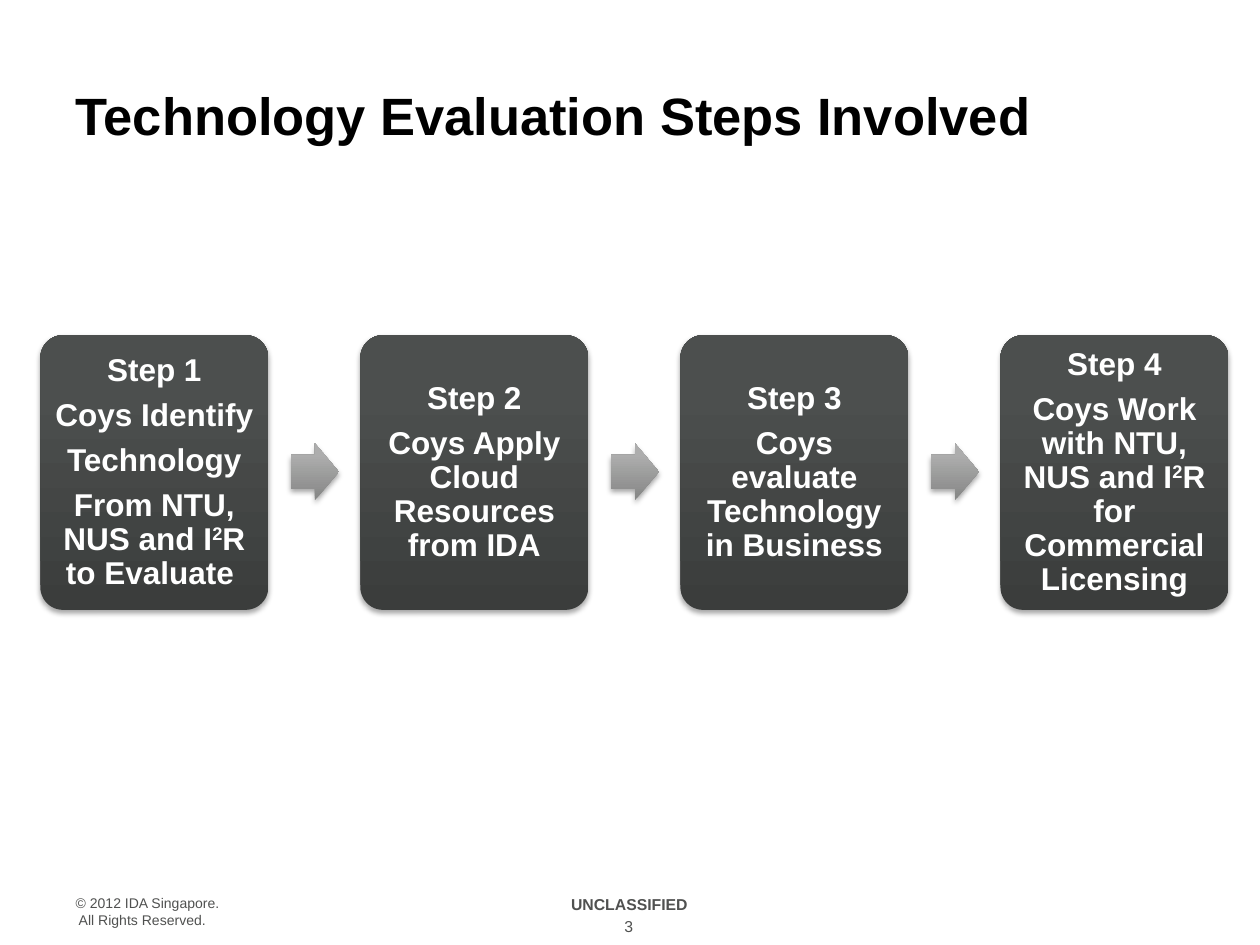
import copy
from dataclasses import dataclass

import lxml.etree
import pptx
import pptx.dml.color
import pptx.enum.shapes
import pptx.enum.text
import pptx.oxml.ns
import pptx.util

RGB = pptx.dml.color.RGBColor
SHAPE = pptx.enum.shapes.MSO_SHAPE
ALIGN = pptx.enum.text.PP_ALIGN
ANCHOR = pptx.enum.text.MSO_ANCHOR

BLACK = RGB(0x00, 0x00, 0x00)
WHITE = RGB(0xFF, 0xFF, 0xFF)
FOOTER_GREY = RGB(0x50, 0x51, 0x50)
CARD_GRADIENT = (RGB(0x3B, 0x3D, 0x3C), RGB(0x4C, 0x4F, 0x4E), RGB(0x4D, 0x4F, 0x4E))
ARROW_GRADIENT = (RGB(0x85, 0x86, 0x85), RGB(0xAD, 0xAD, 0xAD), RGB(0xAE, 0xAE, 0xAE))
GRADIENT_POSITIONS = (0, 0.8, 1)

SLIDE_WIDTH = pptx.util.Inches(10)
SLIDE_HEIGHT = pptx.util.Inches(7.5)
STEP_PITCH = 25.4


@dataclass(frozen=True)
class Area:
    """Place and size in percent of the slide."""

    left: float
    top: float
    width: float
    height: float

    def at_step(self, index: int) -> "Area":
        return Area(self.left + index * STEP_PITCH, self.top, self.width, self.height)

    def lengths(self) -> tuple[int, int, int, int]:
        return (
            round(SLIDE_WIDTH * self.left / 100),
            round(SLIDE_HEIGHT * self.top / 100),
            round(SLIDE_WIDTH * self.width / 100),
            round(SLIDE_HEIGHT * self.height / 100),
        )


@dataclass(frozen=True)
class Label:
    text: str
    area: Area
    size: float
    color: RGB = FOOTER_GREY
    bold: bool = False
    align: ALIGN = ALIGN.CENTER
    anchor: ANCHOR = ANCHOR.TOP
    inset: float = 0


CARD = Area(3.2, 35.47, 18.1, 29.07)
ARROW = Area(23.1, 46.93, 3.8, 6)

STEPS = (
    ("Step 1", "Coys Identify", "Technology", "From NTU, NUS and I^2^R to Evaluate "),
    ("Step 2", "Coys Apply Cloud Resources from IDA"),
    ("Step 3", "Coys evaluate Technology in Business"),
    ("Step 4", "Coys Work with NTU, NUS and I^2^R for Commercial Licensing"),
)

LABELS = (
    Label("UNCLASSIFIED", Area(40.8, 94.67, 18.3, 4.13), 9, bold=True),
    Label("© 2012 IDA Singapore.\v All Rights Reserved.",
          Area(6, 94.67, 24.9, 4.13), 8, align=ALIGN.LEFT),
    Label("3", Area(48, 96.4, 3.8, 3.33), 9, inset=0.05),
    Label("Technology Evaluation Steps Involved", Area(6, 5.47, 88.1, 13.33), 30,
          BLACK, bold=True, align=ALIGN.LEFT, anchor=ANCHOR.MIDDLE),
)


def apply(target, values: dict) -> None:
    for key, value in values.items():
        setattr(target, key, value)


def format_frame(frame, anchor: ANCHOR, inset: float) -> None:
    margin = pptx.util.Inches(inset)
    apply(frame, {
        "word_wrap": True,
        "vertical_anchor": anchor,
        "margin_left": margin,
        "margin_right": margin,
        "margin_top": margin,
        "margin_bottom": margin,
    })


def format_font(font, size: float, color: RGB, bold: bool) -> None:
    apply(font, {"name": "Arial", "size": pptx.util.Pt(size), "bold": bold})
    font.color.rgb = color


def add_label(slide, label: Label) -> None:
    frame = slide.shapes.add_textbox(*label.area.lengths()).text_frame
    format_frame(frame, label.anchor, label.inset)
    frame.text = label.text
    paragraph = frame.paragraphs[0]
    paragraph.alignment = label.align
    for run in paragraph.runs:
        format_font(run.font, label.size, label.color, label.bold)


def add_shadow(shape) -> None:
    shape.shadow.inherit = False
    qn = pptx.oxml.ns.qn
    effects = shape.element.spPr.find(qn("a:effectLst"))
    shadow = lxml.etree.SubElement(effects, qn("a:outerShdw"), {
        "blurRad": str(pptx.util.Pt(3.1)),
        "dist": str(pptx.util.Pt(1.8)),
        "dir": "5400000",
        "rotWithShape": "0",
    })
    color = lxml.etree.SubElement(shadow, qn("a:srgbClr"), val=str(BLACK))
    lxml.etree.SubElement(color, qn("a:alpha"), val="35000")


def add_gradient_shape(slide, kind: SHAPE, area: Area, adjustments: tuple, colors: tuple):
    shape = slide.shapes.add_shape(kind, *area.lengths())
    for index, value in enumerate(adjustments):
        shape.adjustments[index] = value
    shape.line.fill.background()
    shape.fill.gradient()
    shape.fill.gradient_angle = 90
    stop_list = shape.element.spPr.find(".//" + pptx.oxml.ns.qn("a:gsLst"))
    stop_list.insert(1, copy.deepcopy(stop_list[0]))
    for stop, position, color in zip(shape.fill.gradient_stops, GRADIENT_POSITIONS, colors):
        stop.position = position
        stop.color.rgb = color
    add_shadow(shape)
    return shape


def add_step(slide, index: int, lines: tuple[str, ...]) -> None:
    card = add_gradient_shape(slide, SHAPE.ROUNDED_RECTANGLE, CARD.at_step(index),
                              (0.1,), CARD_GRADIENT)
    frame = card.text_frame
    format_frame(frame, ANCHOR.MIDDLE, 0.03)
    for number, line in enumerate(lines):
        paragraph = frame.add_paragraph() if number else frame.paragraphs[0]
        apply(paragraph, {
            "alignment": ALIGN.CENTER,
            "line_spacing": 0.9,
            "space_after": pptx.util.Pt(6.3),
        })
        for part, text in enumerate(line.split("^")):
            run = paragraph.add_run()
            run.text = text
            format_font(run.font, 18, WHITE, True)
            if part % 2:
                run._r.get_or_add_rPr().set("baseline", "30000")


def main() -> None:
    presentation = pptx.Presentation()
    apply(presentation, {"slide_width": SLIDE_WIDTH, "slide_height": SLIDE_HEIGHT})
    slide = presentation.slides.add_slide(presentation.slide_layouts[6])
    for label in LABELS:
        add_label(slide, label)
    for index, lines in enumerate(STEPS):
        add_step(slide, index, lines)
        if index < len(STEPS) - 1:
            add_gradient_shape(slide, SHAPE.RIGHT_ARROW, ARROW.at_step(index),
                               (0.6, 0.5), ARROW_GRADIENT)
    presentation.save("out.pptx")


if __name__ == "__main__":
    main()
